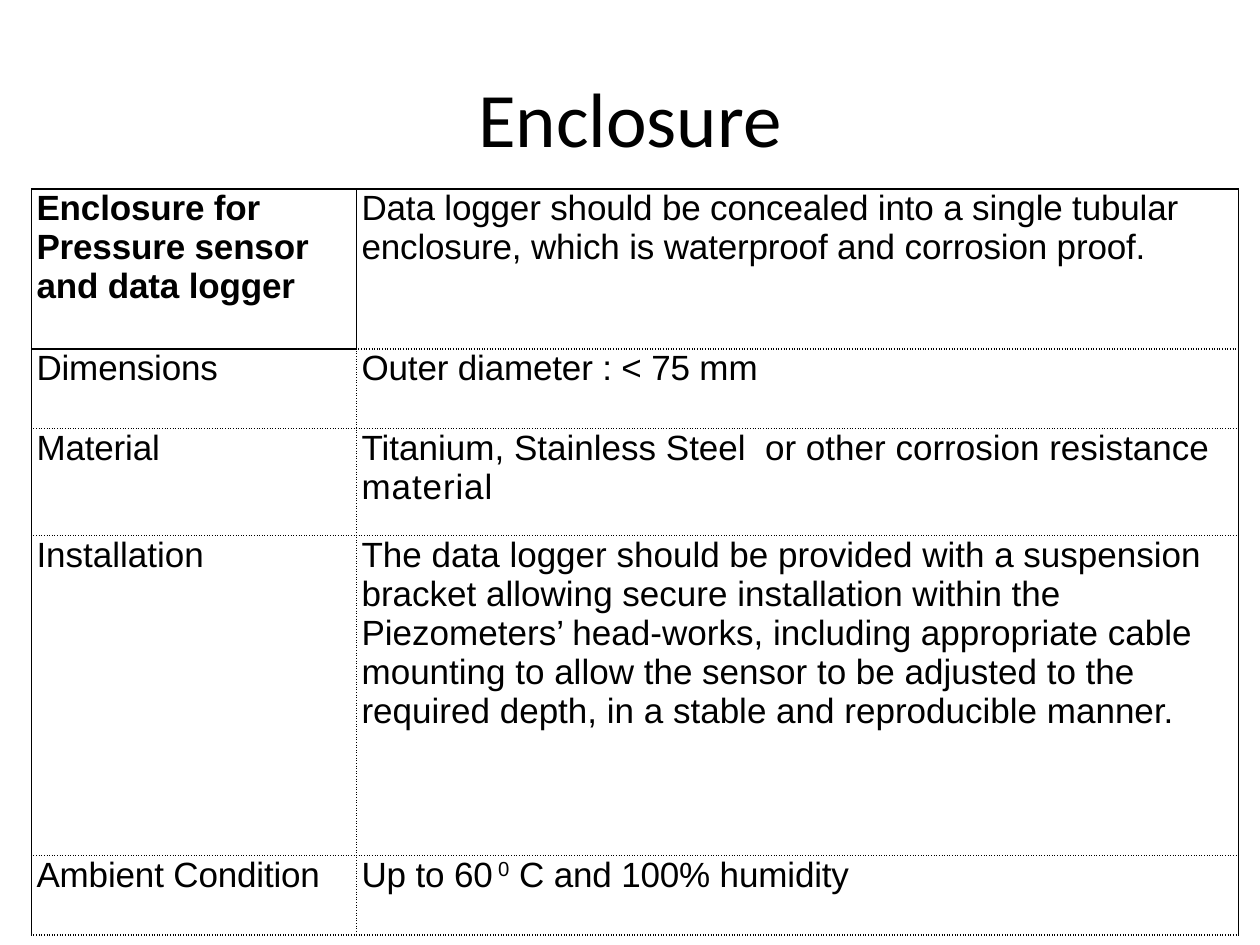
from dataclasses import dataclass

from lxml import etree
from pptx import Presentation
from pptx.dml.color import RGBColor
from pptx.enum.text import MSO_ANCHOR, PP_ALIGN
from pptx.oxml.ns import qn
from pptx.util import Inches, Pt

MIDDLE, TOP = MSO_ANCHOR.MIDDLE, MSO_ANCHOR.TOP
CENTER = PP_ALIGN.CENTER
TITLE_ONLY = 5


@dataclass(frozen=True)
class Theme:
    ink: str = "000000"
    paper: str = "FFFFFF"
    head: str = "Calibri"
    body: str = "Arial"
    big: int = 44
    text: int = 20
    line: int = 1


THEME = Theme()
WIDE, HIGH = 10, 7.5
TITLE_BOX = (0.05, 0.04, 0.9, 1 / 6)  # shares of the slide
GRID_BOX = (0.025, 0.2, 0.958, 0.79)
COLS = (2.58, 7)
ROWS = (1.27, 0.63, 0.85, 2.54, 0.63)
PAD = {"margin_left": Inches(0.04), "margin_right": Inches(0.04),
       "margin_top": 0, "margin_bottom": 0, "vertical_anchor": TOP}

TIGHT = {"spc": "-10"}
# Each row: label runs, label gap, value runs; a run is (text, run attributes)
SPECS = [
    ([("Enclosure for Pressure sensor and data logger", TIGHT)], 4,
     [("Data logger should be concealed into a single tubular enclosure, "
       "which is waterproof and corrosion proof.", TIGHT)]),
    ([("Dimensions", TIGHT)], 4, [("Outer diameter : < 75 mm", TIGHT)]),
    ([("Material", TIGHT)], 4,
     [("Titanium, Stainless Steel  or other corrosion resistance", {}),
      (" material", {"spc": "50"})]),
    ([("Installation", {})], 0,
     [("The data logger should be provided with a suspension bracket "
       "allowing secure installation within the Piezometers’ head-works, "
       "including appropriate cable mounting to allow the sensor to be "
       "adjusted to the required depth, in a stable and reproducible "
       "manner.", {})]),
    ([("Ambient Condition", TIGHT)], 4,
     [("Up to 60", TIGHT), (" 0", {**TIGHT, "baseline": "30000"}),
      (" C and 100% humidity", TIGHT)]),
]


def apply(item, form):
    for key, value in form.items():
        setattr(item, key, value)


def style(font, name, size, bold=False):
    apply(font, {"name": name, "size": Pt(size), "bold": bold})
    font.color.rgb = RGBColor.from_string(THEME.ink)


def place(box):
    """Turn shares of the slide into lengths."""
    return [Inches(part * full)
            for part, full in zip(box, (WIDE, HIGH, WIDE, HIGH))]


def add_title(slide, box, text):
    title = slide.shapes.title
    apply(title, dict(zip(("left", "top", "width", "height"), place(box))))
    frame = title.text_frame
    frame.vertical_anchor = MIDDLE
    par = frame.paragraphs[0]
    par.alignment = CENTER
    run = par.add_run()
    run.text = text
    style(run.font, THEME.head, THEME.big)


def fill_cell(cell, runs, gap, bold):
    apply(cell, PAD)
    cell.fill.solid()
    cell.fill.fore_color.rgb = RGBColor.from_string(THEME.paper)
    par = cell.text_frame.paragraphs[0]
    par.space_after = Pt(gap)
    for text, attrs in runs:
        run = par.add_run()
        run.text = text
        style(run.font, THEME.body, THEME.text, bold)
        for key, value in attrs.items():
            run.font._element.set(key, value)


def rule_cell(cell, solid):
    """Draw the four borders, solid on the named sides and dotted elsewhere."""
    props = cell._tc.get_or_add_tcPr()
    for spot, side in enumerate("LRTB"):
        line = etree.Element(qn("a:ln" + side), w=str(Pt(THEME.line)))
        fill = etree.SubElement(line, qn("a:solidFill"))
        etree.SubElement(fill, qn("a:srgbClr"), val=THEME.ink)
        dash = "solid" if side in solid else "sysDot"
        etree.SubElement(line, qn("a:prstDash"), val=dash)
        props.insert(spot, line)


def sides(row, col):
    """Outer edges are solid, but the bottom; the heading cell is boxed."""
    if row == col == 0:
        return "LRTB"
    edge = "R" if col else "L"
    if row == 0:
        return edge + "LT"
    return edge + ("T" if row == 1 and col == 0 else "")


def add_grid(slide, box, specs):
    table = slide.shapes.add_table(len(ROWS), len(COLS), *place(box)).table
    apply(table, {"first_row": False, "horz_banding": False})
    for col, width in zip(table.columns, COLS):
        col.width = Inches(width)
    for row, height in zip(table.rows, ROWS):
        row.height = Inches(height)
    for row, (label, gap, value) in enumerate(specs):
        for col, (runs, after) in enumerate(((label, gap), (value, 3))):
            cell = table.cell(row, col)
            fill_cell(cell, runs, after, row == col == 0)
            rule_cell(cell, sides(row, col))


def main():
    deck = Presentation()
    apply(deck, {"slide_width": Inches(WIDE), "slide_height": Inches(HIGH)})
    slide = deck.slides.add_slide(deck.slide_layouts[TITLE_ONLY])
    add_title(slide, TITLE_BOX, "Enclosure")
    add_grid(slide, GRID_BOX, SPECS)
    deck.save("out.pptx")


if __name__ == "__main__":
    main()
